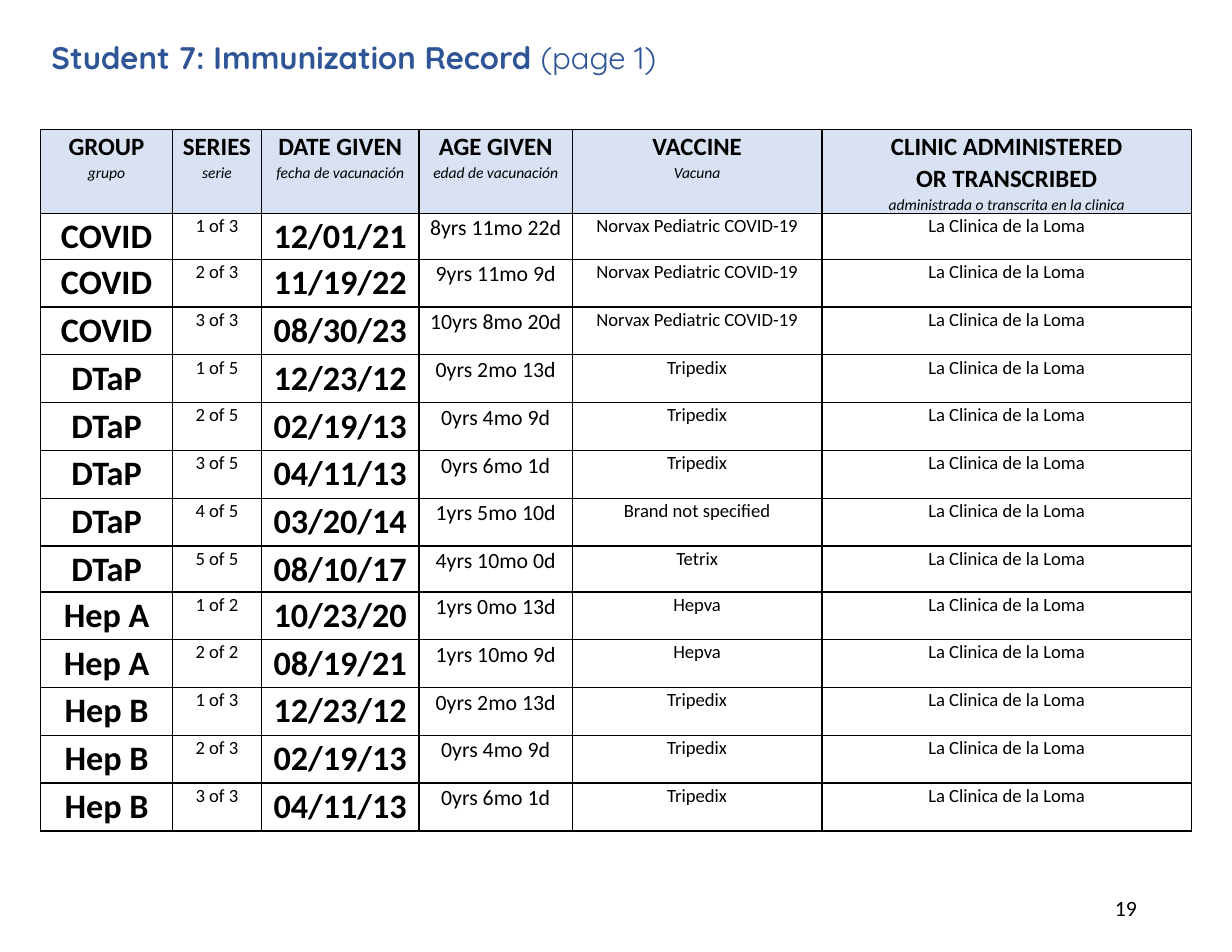
from dataclasses import dataclass

from lxml.etree import SubElement
from pptx import Presentation
from pptx.dml.color import RGBColor
from pptx.enum.text import MSO_ANCHOR, PP_ALIGN
from pptx.oxml.ns import qn
from pptx.util import Pt


@dataclass(frozen=True)
class Theme:
    title_font: str = "Quicksand"
    body_font: str = "Calibri"
    title_color: str = "2F5597"
    ink: str = "000000"
    header_fill: str = "D9E2F3"
    title_size: int = 20
    heading_size: int = 16
    translation_size: int = 10
    key_size: int = 22
    age_size: int = 14
    detail_size: int = 12
    number_size: int = 14
    border: int = 1


THEME = Theme()
TITLE = [("Student 7: Immunization Record ", True), ("(page 1)", False)]
PAGE_NUMBER = "19"
CLINIC = "La Clinica de la Loma"

# English heading lines, Spanish translation, column width, text size, bold
COLUMNS = [
    (["GROUP"], "grupo", 85, THEME.key_size, True),
    (["SERIES"], "serie", 57, THEME.detail_size, False),
    (["DATE GIVEN"], "fecha de vacunación", 101.5, THEME.key_size, True),
    (["AGE GIVEN"], "edad de vacunación", 98.5, THEME.age_size, False),
    (["VACCINE"], "Vacuna", 160.5, THEME.detail_size, False),
    (["CLINIC ADMINISTERED", "OR TRANSCRIBED"],
     "administrada o transcrita en la clinica", 237.5, THEME.detail_size, False),
]

# Group and its doses: date, age, vaccine
RECORDS = [
    ("COVID", [("12/01/21", "8yrs 11mo 22d", "Norvax Pediatric COVID-19"),
               ("11/19/22", "9yrs 11mo 9d", "Norvax Pediatric COVID-19"),
               ("08/30/23", "10yrs 8mo 20d", "Norvax Pediatric COVID-19")]),
    ("DTaP", [("12/23/12", "0yrs 2mo 13d", "Tripedix"),
              ("02/19/13", "0yrs 4mo 9d", "Tripedix"),
              ("04/11/13", "0yrs 6mo 1d", "Tripedix"),
              ("03/20/14", "1yrs 5mo 10d", "Brand not specified"),
              ("08/10/17", "4yrs 10mo 0d", "Tetrix")]),
    ("Hep A", [("10/23/20", "1yrs 0mo 13d", "Hepva"),
               ("08/19/21", "1yrs 10mo 9d", "Hepva")]),
    ("Hep B", [("12/23/12", "0yrs 2mo 13d", "Tripedix"),
               ("02/19/13", "0yrs 4mo 9d", "Tripedix"),
               ("04/11/13", "0yrs 6mo 1d", "Tripedix")]),
]

TABLE_LEFT, TABLE_TOP = 26, 83.25
HEADER_HEIGHT, ROW_HEIGHT, SHORT_ROW_HEIGHT = 50.5, 30.75, 29.5
SHORT_ROWS = {1, 8}
CELL_INSET = 5


def style_run(span, size, color=THEME.ink, font=THEME.body_font, bold=False, italic=False):
    span.font.name = font
    span.font.size = Pt(size)
    span.font.bold = bold
    span.font.italic = italic
    span.font.color.rgb = RGBColor.from_string(color)


def add_text_box(page, left, top, width, height):
    box = page.shapes.add_textbox(Pt(left), Pt(top), Pt(width), Pt(height))
    box.text_frame.word_wrap = True
    box.text_frame.vertical_anchor = MSO_ANCHOR.MIDDLE
    return box.text_frame.paragraphs[0]


def add_borders(cell):
    """Draw all four edges; they must come before the fill in the cell XML."""
    properties = cell._tc.get_or_add_tcPr()
    for edge in ("a:lnL", "a:lnR", "a:lnT", "a:lnB"):
        line = SubElement(properties, qn(edge), w=str(Pt(THEME.border)))
        fill = SubElement(line, qn("a:solidFill"))
        SubElement(fill, qn("a:srgbClr"), val=THEME.ink)


def fill_cell(cell, lines, fill=None):
    """Write lines of (text, size, bold, italic), one paragraph each."""
    add_borders(cell)
    if fill:
        cell.fill.solid()
        cell.fill.fore_color.rgb = RGBColor.from_string(fill)
    else:
        cell.fill.background()
    cell.margin_left = cell.margin_right = Pt(CELL_INSET)
    cell.margin_top = cell.margin_bottom = 0
    cell.text_frame.text = "\n".join(line[0] for line in lines)
    for para, (_, size, bold, italic) in zip(cell.text_frame.paragraphs, lines):
        para.alignment = PP_ALIGN.CENTER
        para.line_spacing = 1.07
        style_run(para.runs[0], size, bold=bold, italic=italic)


def add_record_table(page):
    rows = [(group, f"{number} of {len(doses)}", *dose, CLINIC)
            for group, doses in RECORDS
            for number, dose in enumerate(doses, 1)]
    heights = [HEADER_HEIGHT] + [
        SHORT_ROW_HEIGHT if index in SHORT_ROWS else ROW_HEIGHT
        for index in range(1, len(rows) + 1)]
    width = sum(column[2] for column in COLUMNS)
    table = page.shapes.add_table(
        len(heights), len(COLUMNS), Pt(TABLE_LEFT), Pt(TABLE_TOP),
        Pt(width), Pt(sum(heights))).table
    table.first_row = table.horz_banding = False
    for row, height in zip(table.rows, heights):
        row.height = Pt(height)
    for index, (headings, translation, width, size, bold) in enumerate(COLUMNS):
        table.columns[index].width = Pt(width)
        lines = [(heading, THEME.heading_size, True, False) for heading in headings]
        lines.append((translation, THEME.translation_size, False, True))
        fill_cell(table.cell(0, index), lines, THEME.header_fill)
        for number, row in enumerate(rows, 1):
            fill_cell(table.cell(number, index), [(row[index], size, bold, False)])


def main():
    deck = Presentation()
    deck.slide_width, deck.slide_height = Pt(792), Pt(612)
    page = deck.slides.add_slide(deck.slide_layouts[6])

    title = add_text_box(page, 26, 9.5, 683, 57)
    title.line_spacing = 0.9
    for text, bold in TITLE:
        span = title.add_run()
        span.text = text
        style_run(span, THEME.title_size, THEME.title_color, THEME.title_font, bold)

    add_record_table(page)

    number = add_text_box(page, 559.5, 567.5, 178.5, 32.5)
    number.text = PAGE_NUMBER
    number.alignment = PP_ALIGN.RIGHT
    style_run(number.runs[0], THEME.number_size)

    deck.save("out.pptx")


if __name__ == "__main__":
    main()
